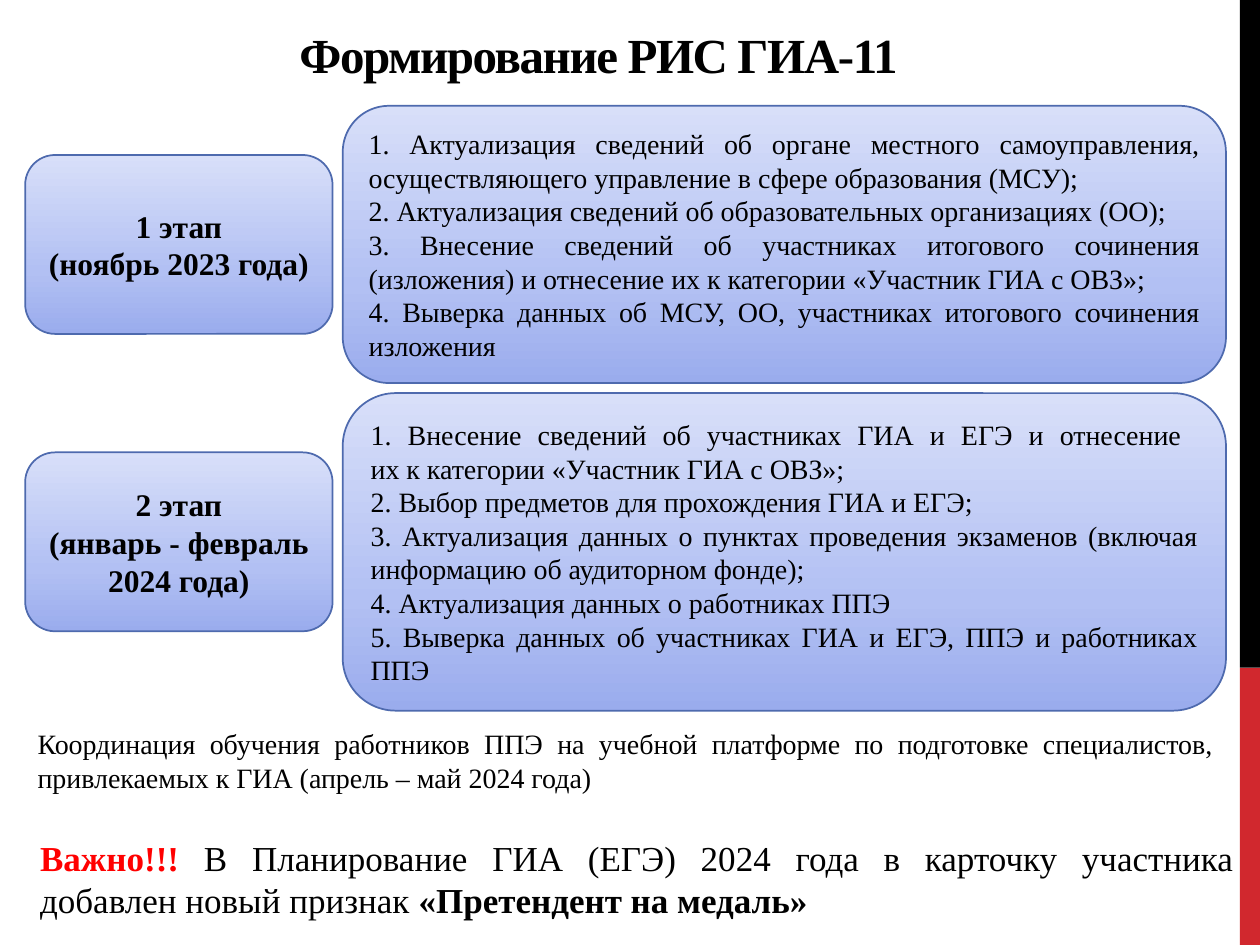
"""Build the slide on the two stages of forming the exam database."""
import copy
import pptx
import pptx.util
import pptx.dml.color
import pptx.enum.shapes
import pptx.enum.text

RGB = pptx.dml.color.RGBColor
BLACK = RGB(0x00, 0x00, 0x00)
RED = RGB(0xFF, 0x00, 0x00)
BRICK = RGB(0xD1, 0x28, 0x2E)
EDGE = RGB(0x4E, 0x6A, 0xAE)
FADE = [(0, RGB(0x9A, 0xAC, 0xED)), (0.35, RGB(0xB2, 0xC0, 0xF3)), (1, RGB(0xD8, 0xDF, 0xF9))]

SHAPE = pptx.enum.shapes.MSO_SHAPE
ALIGN = pptx.enum.text.PP_ALIGN
MIDDLE = pptx.enum.text.MSO_ANCHOR.MIDDLE
GROW = pptx.enum.text.MSO_AUTO_SIZE.SHAPE_TO_FIT_TEXT
SCALE = 9144


class Deck:
    """Hold the style and the current slide."""

    def __init__(self, wide, high):
        self.font = "Times New Roman"
        self.show = pptx.Presentation()
        self.show.slide_width = wide * SCALE
        self.show.slide_height = high * SCALE
        self.slide = self.show.slides.add_slide(self.show.slide_layouts[6])

    def style(self, run, size, color=BLACK, bold=False):
        """Format one run."""
        font = run.font
        font.name, font.size, font.bold = self.font, pptx.util.Pt(size), bold
        font.color.rgb = color

    def label(self, shape, text, size, align, bold=False):
        """Fill a shape with evenly styled paragraphs."""
        frame = shape.text_frame
        frame.word_wrap = True
        frame.text = text
        for para in frame.paragraphs:
            para.alignment = align
            for run in para.runs:
                self.style(run, size, bold=bold)
        return frame

    def shape(self, kind, *spot):
        """Add a preset shape without shadow."""
        shape = self.slide.shapes.add_shape(kind, *[n * SCALE for n in spot])
        shape.shadow.inherit = False
        return shape

    def bar(self, color, *spot):
        """Add a plain block of colour."""
        bar = self.shape(SHAPE.RECTANGLE, *spot)
        bar.fill.solid()
        bar.fill.fore_color.rgb = color
        bar.line.fill.background()

    def card(self, text, size, align, bold, *spot):
        """Add a rounded card with a gradient and text."""
        card = self.shape(SHAPE.ROUNDED_RECTANGLE, *spot)
        card.fill.gradient()
        card.fill.gradient_angle = 90
        first = card._element.spPr.xpath("./a:gradFill/a:gsLst/a:gs")[0]
        first.addnext(copy.deepcopy(first))
        for stop, (place, color) in zip(card.fill.gradient_stops, FADE):
            stop.position = place
            stop.color.rgb = color
        card.line.color.rgb = EDGE
        card.line.width = pptx.util.Pt(1)
        self.label(card, text, size, align, bold).vertical_anchor = MIDDLE

    def text(self, text, size, align, bold, *spot):
        """Add a text box and return its frame."""
        box = self.slide.shapes.add_textbox(*[n * SCALE for n in spot])
        return self.label(box, text, size, align, bold)

    def title(self, text, *spot):
        """Add the tightly spaced heading."""
        frame = self.text(text, 28, ALIGN.CENTER, True, *spot)
        frame.vertical_anchor = MIDDLE
        frame.paragraphs[0].runs[0]._r.get_or_add_rPr().set("spc", "-80")

    def note(self, parts, size, *spot):
        """Add a justified note of (text, colour, bold) parts."""
        frame = self.text("", size, ALIGN.JUSTIFY, False, *spot)
        frame.auto_size = GROW
        para = frame.paragraphs[0]
        for words, color, bold in parts:
            run = para.add_run()
            run.text = words
            self.style(run, size, color, bold)


STAGES = [
    ("1 этап\n(ноябрь 2023 года)", 123, 84, 220, [
        "1. Актуализация сведений об органе местного самоуправления, "
        "осуществляющего управление в сфере образования (МСУ);",
        "2. Актуализация сведений об образовательных организациях (ОО);",
        "3. Внесение сведений об участниках итогового сочинения (изложения) "
        "и отнесение их к категории «Участник ГИА с ОВЗ»;",
        "4. Выверка данных об МСУ, ОО, участниках итогового сочинения изложения",
    ]),
    ("2 этап\n(январь - февраль 2024 года)", 359, 312, 252, [
        "1. Внесение сведений об участниках ГИА и ЕГЭ и отнесение \v"
        "их к категории «Участник ГИА с ОВЗ»;",
        "2. Выбор предметов для прохождения ГИА и ЕГЭ;",
        "3. Актуализация данных о пунктах проведения экзаменов "
        "(включая информацию об аудиторном фонде);",
        "4. Актуализация данных о работниках ППЭ",
        "5. Выверка данных об участниках ГИА и ЕГЭ, ППЭ и работниках ППЭ",
    ]),
]
COURSE = [
    ("Координация обучения работников ППЭ на учебной платформе по подготовке "
     "специалистов, привлекаемых к ГИА (апрель – май 2024 года)", BLACK, False),
]
ALERT = [
    ("Важно!!! ", RED, True),
    ("В Планирование ГИА (ЕГЭ) 2024 года в карточку участника "
     "добавлен новый признак ", BLACK, False),
    ("«Претендент на медаль»", BLACK, True),
]


def main():
    """Draw the slide and save it."""
    deck = Deck(1000, 750)
    deck.bar(BRICK, 984, 530, 16, 220)
    deck.bar(BLACK, 984, 0, 16, 530)
    deck.title("Формирование РИС ГИА-11", 50, 13, 850, 59)
    for name, top, head, high, tasks in STAGES:
        deck.card(name, 18, ALIGN.CENTER, True, 20, top, 244, 142)
        deck.card("\n".join(tasks), 16, ALIGN.JUSTIFY, False, 272, head, 701, high)
    deck.note(COURSE, 16, 20, 572, 953, 64)
    deck.note(ALERT, 20, 22, 659, 967, 77)
    deck.show.save("out.pptx")


if __name__ == "__main__":
    main()
